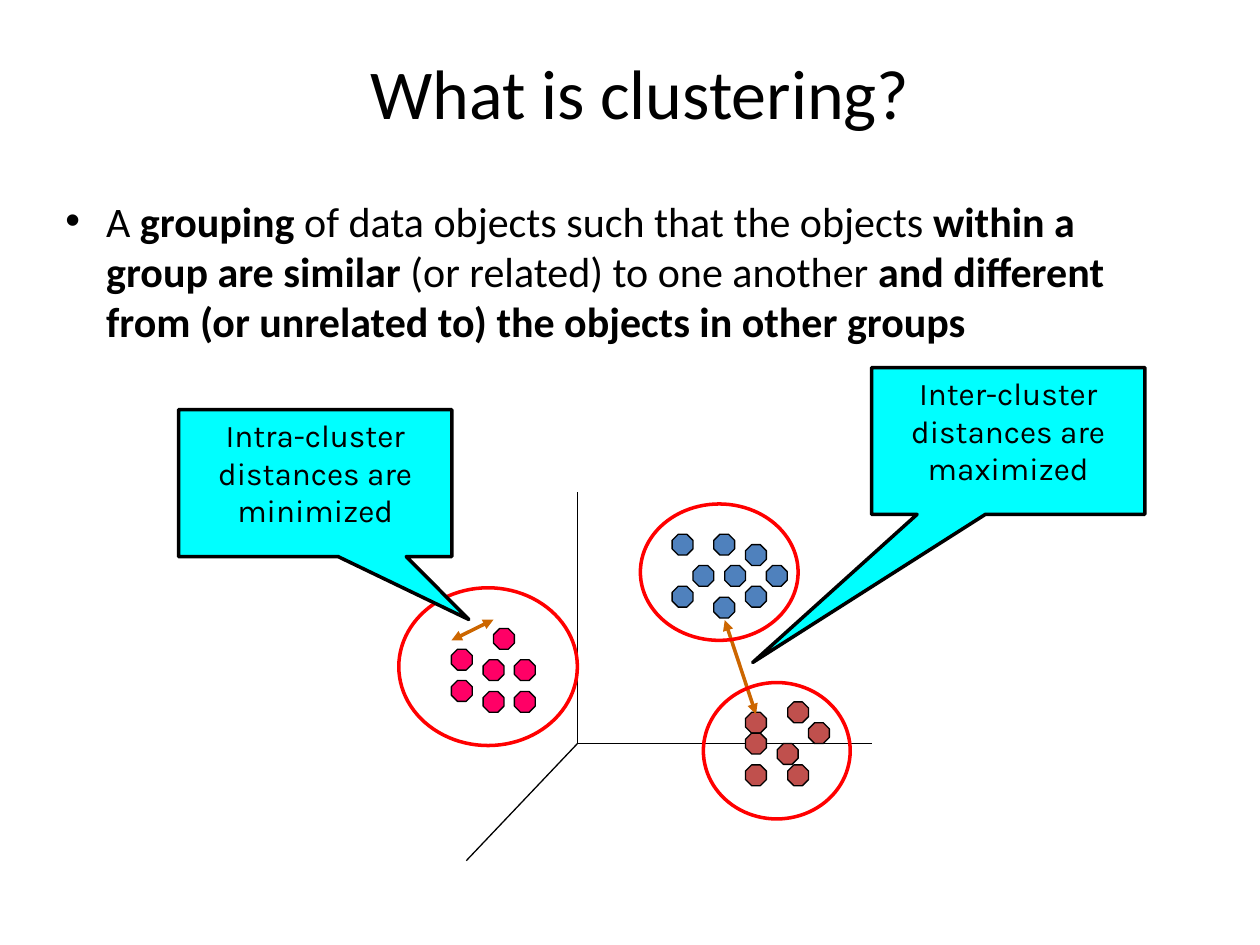
from dataclasses import dataclass
from typing import NamedTuple

from lxml.etree import SubElement
from pptx import Presentation
from pptx.dml.color import RGBColor
from pptx.enum.shapes import MSO_CONNECTOR, MSO_SHAPE
from pptx.enum.text import MSO_ANCHOR, PP_ALIGN
from pptx.oxml.ns import qn
from pptx.shapes.autoshape import Shape
from pptx.slide import Slide
from pptx.text.text import _Run
from pptx.util import Cm, Pt


@dataclass(frozen=True)
class Theme:
    ink: str = "000000"
    blue: str = "4F81BD"
    pink: str = "FF0066"
    brick: str = "C0504D"
    ring: str = "FF0000"
    arrow: str = "CC6600"
    callout: str = "00FFFF"
    text_font: str = "Calibri"
    callout_font: str = "Karla"
    title_size: float = 40
    body_size: float = 24
    callout_size: float = 18
    thin: float = 0.75
    thick: float = 2


class Point(NamedTuple):
    x: float
    y: float


class Frame(NamedTuple):
    left: float
    top: float
    width: float
    height: float


class Cluster(NamedTuple):
    color: str
    ring: Frame
    dots: list[Point]


class Callout(NamedTuple):
    text: str
    frame: Frame
    tip: Point
    arrow_start: Point
    arrow_end: Point


THEME = Theme()
DOT_SIZE = 0.42
TITLE_FRAME = Frame(1.47, 0.84, 22.86, 2.03)
BODY_FRAME = Frame(1.07, 3.81, 22.86, 3.15)
BODY_SPANS = [
    ("A ", False),
    ("grouping", True),
    (" of data objects such that the objects ", False),
    ("within a group are similar", True),
    (" (or related) to one another ", False),
    ("and different from (or unrelated to) the objects in other groups", True),
]
ORIGIN = Point(11.64, 14.99)
AXIS_ENDS = [Point(11.64, 9.91), Point(17.57, 14.99), Point(9.4, 17.35)]
CLUSTERS = [
    Cluster(THEME.pink, Frame(8.04, 11.85, 3.6, 3.18), [
        Point(9.1, 13.09), Point(9.74, 13.3), Point(9.74, 13.94), Point(10.37, 13.3),
        Point(9.95, 12.67), Point(10.37, 13.94), Point(9.1, 13.72),
    ]),
    Cluster(THEME.blue, Frame(12.91, 10.16, 3.18, 2.75), [
        Point(13.97, 11.4), Point(14.61, 11.4), Point(14.39, 10.77),
        Point(14.39, 12.04), Point(15.45, 11.4), Point(15.03, 10.98),
        Point(13.55, 10.77), Point(15.03, 11.82), Point(13.55, 11.82),
    ]),
    Cluster(THEME.brick, Frame(14.18, 13.76, 2.96, 2.75), [
        Point(15.03, 14.36), Point(16.3, 14.57), Point(15.67, 14.99), Point(15.03, 15.42),
        Point(15.88, 15.42), Point(15.03, 14.78), Point(15.88, 14.15),
    ]),
]
INTER = Callout("Inter-cluster distances are maximized", Frame(17.57, 7.41, 5.51, 2.96),
                Point(-0.935, 1.509), Point(15.24, 14.4), Point(14.61, 12.5))
INTRA = Callout("Intra-cluster distances are minimized", Frame(3.6, 8.26, 5.51, 2.96),
                Point(0.562, 0.929), Point(9.1, 12.91), Point(9.95, 12.49))


def color_of(code: str) -> RGBColor:
    return RGBColor.from_string(code)


def format_span(span: _Run, font: str, size: float, bold: bool = False) -> None:
    span.font.name = font
    span.font.size = Pt(size)
    span.font.bold = bold
    span.font.color.rgb = color_of(THEME.ink)


def add_figure(page: Slide, kind: MSO_SHAPE, frame: Frame, line: str, width: float,
               fill: str | None = None) -> Shape:
    figure = page.shapes.add_shape(kind, *map(Cm, frame))
    figure.shadow.inherit = False
    if fill:
        figure.fill.solid()
        figure.fill.fore_color.rgb = color_of(fill)
    else:
        figure.fill.background()
    figure.line.color.rgb = color_of(line)
    figure.line.width = Pt(width)
    return figure


def add_line(page: Slide, start: Point, end: Point, color: str, width: float,
             arrows: bool = False) -> None:
    line = page.shapes.add_connector(MSO_CONNECTOR.STRAIGHT, *map(Cm, (*start, *end)))
    line.line.color.rgb = color_of(color)
    line.line.width = Pt(width)
    if arrows:
        outline = line.line._get_or_add_ln()
        for end_name in ("a:headEnd", "a:tailEnd"):
            SubElement(outline, qn(end_name), type="triangle")
    SubElement(line._element.spPr, qn("a:effectLst"))


def add_title(page: Slide, text: str) -> None:
    title = page.shapes.title
    title.left, title.top, title.width, title.height = map(Cm, TITLE_FRAME)
    title.text_frame.text = text
    title.text_frame.vertical_anchor = MSO_ANCHOR.MIDDLE
    para = title.text_frame.paragraphs[0]
    para.alignment = PP_ALIGN.CENTER
    format_span(para.runs[0], THEME.text_font, THEME.title_size)


def add_body(page: Slide) -> None:
    box = page.shapes.add_textbox(*map(Cm, BODY_FRAME))
    box.text_frame.word_wrap = True
    para = box.text_frame.paragraphs[0]
    para.space_before = Pt(THEME.body_size * 0.2)
    properties = para._p.get_or_add_pPr()
    properties.set("marL", str(Cm(0.82)))
    properties.set("indent", str(-Cm(0.82)))
    SubElement(properties, qn("a:buFont"), typeface="Arial")
    SubElement(properties, qn("a:buChar"), char="•")
    for text, bold in BODY_SPANS:
        span = para.add_run()
        span.text = text
        format_span(span, THEME.text_font, THEME.body_size, bold)


def add_dots(page: Slide, cluster: Cluster) -> None:
    for dot in cluster.dots:
        frame = Frame(dot.x, dot.y, DOT_SIZE, DOT_SIZE)
        add_figure(page, MSO_SHAPE.OCTAGON, frame, THEME.ink, THEME.thin, cluster.color)


def add_callout(page: Slide, callout: Callout) -> None:
    add_line(page, callout.arrow_start, callout.arrow_end, THEME.arrow, THEME.thick, True)
    box = add_figure(page, MSO_SHAPE.RECTANGULAR_CALLOUT, callout.frame,
                     THEME.ink, THEME.thick, THEME.callout)
    box.adjustments[0], box.adjustments[1] = callout.tip
    box.text_frame.word_wrap = True
    box.text_frame.vertical_anchor = MSO_ANCHOR.TOP
    box.text_frame.text = callout.text
    para = box.text_frame.paragraphs[0]
    para.alignment = PP_ALIGN.CENTER
    format_span(para.runs[0], THEME.callout_font, THEME.callout_size)


def main() -> None:
    deck = Presentation()
    deck.slide_width, deck.slide_height = Cm(25.4), Cm(19.05)
    page = deck.slides.add_slide(deck.slide_layouts[5])
    add_title(page, "What is clustering?")
    add_body(page)
    for end in AXIS_ENDS:
        add_line(page, ORIGIN, end, THEME.ink, THEME.thin)
    for cluster in CLUSTERS:
        add_dots(page, cluster)
    add_callout(page, INTER)
    for cluster in CLUSTERS:
        add_figure(page, MSO_SHAPE.OVAL, cluster.ring, THEME.ring, THEME.thick)
    add_callout(page, INTRA)
    deck.save("out.pptx")


if __name__ == "__main__":
    main()
